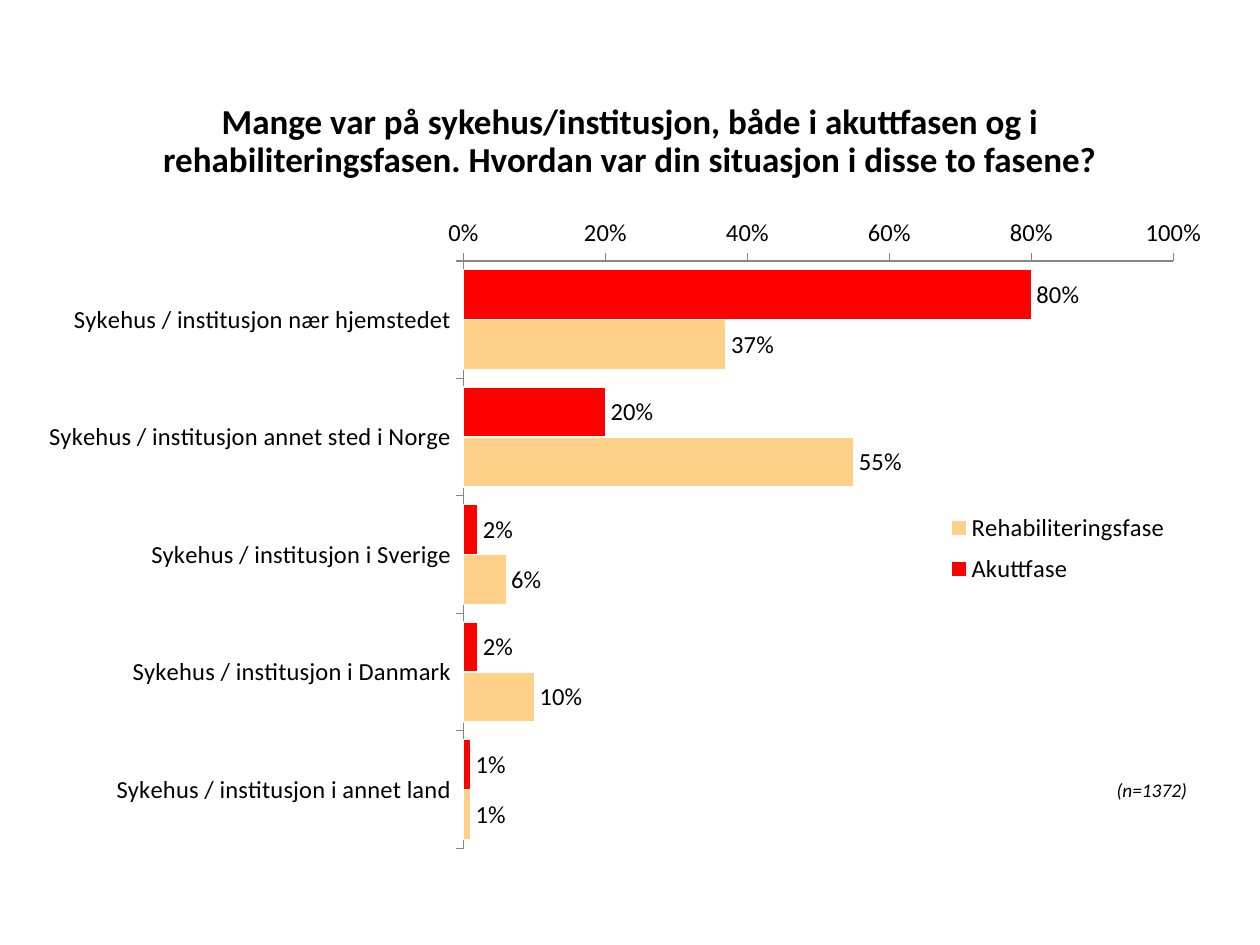
from dataclasses import dataclass

from lxml import etree
from pptx import Presentation
from pptx import util as u
from pptx.chart import data as cd
from pptx.dml.color import RGBColor
from pptx.enum import chart as ch, text as tx
from pptx.oxml import ns


@dataclass(frozen=True)
class Theme:
    font: str = "Calibri"
    ink: str = "000000"
    axis: str = "868686"
    edge: str = "FFFFFF"
    title: int = 20
    label: int = 14
    note: int = 11


@dataclass(frozen=True)
class Box:
    left: float
    top: float
    width: float
    height: float

    def cm(self) -> list:
        return [u.Cm(v) for v in (self.left, self.top, self.width, self.height)]


@dataclass(frozen=True)
class Phase:
    name: str
    color: str
    vals: tuple


THEME = Theme()
PLACES = ("nær hjemstedet", "annet sted i Norge", "i Sverige", "i Danmark",
          "i annet land")
PHASES = (
    Phase("Akuttfase", "FF0000", (0.8, 0.2, 0.02, 0.02, 0.01)),
    Phase("Rehabiliteringsfase", "FFD088", (0.37, 0.55, 0.06, 0.1, 0.01)),
)


def apply(obj, props: dict) -> None:
    for key, val in props.items():
        setattr(obj, key, val)


def style(font, size: int, **extra) -> None:
    apply(font, {"name": THEME.font, "size": u.Pt(size), **extra})
    font.color.rgb = RGBColor.from_string(THEME.ink)


def line(fmt, color: str) -> None:
    fmt.line.color.rgb = RGBColor.from_string(color)
    fmt.line.width = u.Pt(0.75)


def place(node, index: int, inner: bool, box: Box) -> None:
    """Give a chart part a fixed layout, in fractions of the chart."""
    tag = ns.qn("c:layout")
    for old in node.findall(tag):
        node.remove(old)
    lay = etree.Element(tag)
    man = etree.SubElement(lay, ns.qn("c:manualLayout"))
    vals = {"layoutTarget": "inner"} if inner else {}
    vals |= {"xMode": "edge", "yMode": "edge", "x": box.left, "y": box.top,
             "w": box.width, "h": box.height}
    for key, val in vals.items():
        etree.SubElement(man, ns.qn("c:" + key)).set("val", str(val))
    node.insert(index, lay)


def add_title(slide, box: Box, words: str) -> None:
    frame = slide.shapes.add_textbox(*box.cm()).text_frame
    apply(frame, {"word_wrap": True, "vertical_anchor": tx.MSO_ANCHOR.MIDDLE})
    para = frame.paragraphs[0]
    apply(para, {"alignment": tx.PP_ALIGN.CENTER, "line_spacing": 0.9})
    run = para.add_run()
    run.text = words
    style(run.font, THEME.title, bold=True)


def add_bars(slide, box: Box) -> None:
    data = cd.CategoryChartData(number_format="0%")
    data.categories = [f"Sykehus / institusjon {p}" for p in PLACES]
    for phase in PHASES:
        data.add_series(phase.name, phase.vals)
    kind = ch.XL_CHART_TYPE.BAR_CLUSTERED
    chart = slide.shapes.add_chart(kind, *box.cm(), data).chart
    apply(chart, {"has_title": False, "has_legend": True})
    style(chart.font, THEME.label)

    # Axes
    for axis in (chart.category_axis, chart.value_axis):
        apply(axis, {"has_major_gridlines": False,
                     "major_tick_mark": ch.XL_TICK_MARK.OUTSIDE,
                     "minor_tick_mark": ch.XL_TICK_MARK.NONE})
        line(axis.format, THEME.axis)
    chart.category_axis.reverse_order = True
    apply(chart.value_axis, {"minimum_scale": 0, "maximum_scale": 1,
                             "major_unit": 0.2})
    apply(chart.value_axis.tick_labels, {"number_format": "0%",
                                         "number_format_is_linked": False})

    # Bars and their values
    plot = chart.plots[0]
    apply(plot, {"gap_width": 35, "overlap": 0, "vary_by_categories": False})
    for phase, bars in zip(PHASES, plot.series):
        bars.format.fill.solid()
        bars.format.fill.fore_color.rgb = RGBColor.from_string(phase.color)
        line(bars.format, THEME.edge)
        apply(bars.data_labels, {"show_value": True, "number_format": "0%",
                                 "number_format_is_linked": False,
                                 "position": ch.XL_LABEL_POSITION.OUTSIDE_END})

    # Legend and plot area
    apply(chart.legend, {"position": ch.XL_LEGEND_POSITION.RIGHT,
                         "include_in_layout": True})
    root = chart.element
    place(root.find(".//" + ns.qn("c:plotArea")), 0, True,
          Box(0.365, 0.087, 0.591, 0.895))
    place(root.find(".//" + ns.qn("c:legend")), 1, False,
          Box(0.76, 0.455, 0.2, 0.14))


def add_note(slide, box: Box, words: str) -> None:
    table = slide.shapes.add_table(1, 1, *box.cm()).table
    apply(table, {"first_row": False, "horz_banding": False})
    cell = table.cell(0, 0)
    cell.fill.background()
    pad = u.Cm(0.03)
    apply(cell, {"margin_left": pad, "margin_right": pad, "margin_top": pad,
                 "margin_bottom": 0, "vertical_anchor": tx.MSO_ANCHOR.BOTTOM})
    run = cell.text_frame.paragraphs[0].add_run()
    run.text = words
    style(run.font, THEME.note, italic=True, bold=False)


def main() -> None:
    deck = Presentation()
    apply(deck, {"slide_width": u.Cm(25.4), "slide_height": u.Cm(19.05)})
    slide = deck.slides.add_slide(deck.slide_layouts[6])
    add_title(slide, Box(1.75, 1.02, 21.9, 3.68),
              "Mange var på sykehus/institusjon, både i akuttfasen og i "
              "rehabiliteringsfasen. Hvordan var din situasjon i disse to fasene?")
    add_bars(slide, Box(0.51, 4.11, 24.21, 13.23))
    add_note(slide, Box(22.48, 15.65, 2.11, 0.53), "(n=1372)")
    deck.save("out.pptx")


if __name__ == "__main__":
    main()
